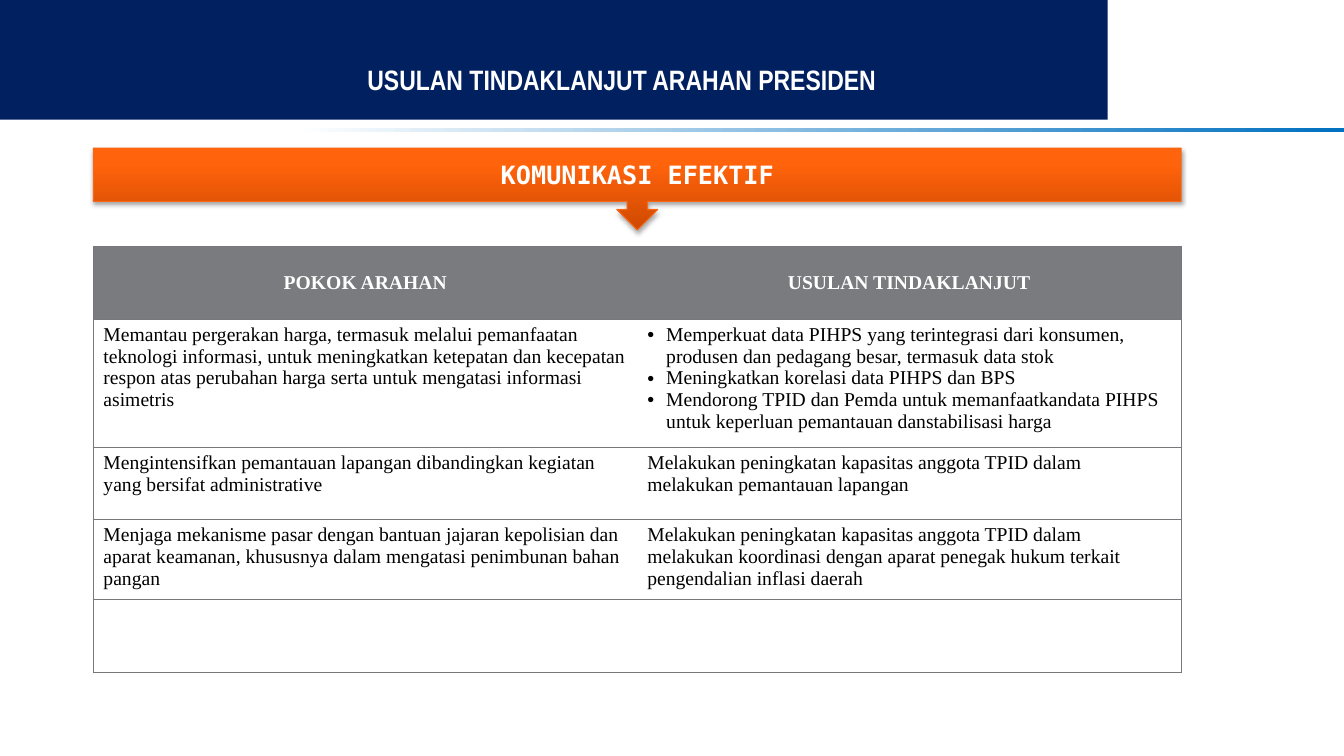
from lxml import etree
from pptx import Presentation
from pptx import util as u
from pptx.dml import color
from pptx.enum import shapes, text
from pptx.oxml import ns

Pt = u.Pt
COLORS = {
    "navy": "002060", "blue": "0070C0", "white": "FFFFFF", "black": "000000",
    "gray": "797B7E", "border": "76787B",
    "orange_dark": "CE4900", "orange": "FF630C", "orange_light": "FF640E",
    "orange_line": "F96615",
}


def add_run(paragraph, words, font, size, color_name, bold=False):
    run = paragraph.add_run()
    run.text = words
    run.font.name = font
    run.font.size = Pt(size)
    run.font.bold = bold
    run.font.color.rgb = color.RGBColor.from_string(COLORS[color_name])


def set_gradient(shape, angle, stops):
    shape.fill.gradient()
    shape.fill.gradient_angle = angle
    stop_list = shape.element.spPr.find(".//" + ns.qn("a:gsLst"))
    for stop in list(stop_list):
        stop_list.remove(stop)
    for position, color_name in stops:
        stop = etree.SubElement(stop_list, ns.qn("a:gs"), pos=str(position * 1000))
        etree.SubElement(stop, ns.qn("a:srgbClr"), val=COLORS[color_name])


presentation = Presentation()
presentation.slide_width, presentation.slide_height = Pt(960), Pt(540)
slide = presentation.slides.add_slide(presentation.slide_layouts[5])

# Header rule and band
rule = slide.shapes.add_shape(
    shapes.MSO_SHAPE.FLOWCHART_PROCESS, Pt(0), Pt(91.5), Pt(960), Pt(2.9))
rule.shadow.inherit = False
rule.line.fill.background()
set_gradient(rule, 180, [(0, "blue"), (78, "white"), (100, "white")])

band = slide.shapes.add_shape(
    shapes.MSO_SHAPE.RECTANGLE, Pt(-1.5), Pt(0), Pt(792.8), Pt(85.4))
band.shadow.inherit = False
band.fill.solid()
band.fill.fore_color.rgb = color.RGBColor.from_string(COLORS["navy"])
band.line.fill.background()

# Title, brought in front of the band
title = slide.shapes.title
title.left, title.top, title.width, title.height = Pt(173.5), Pt(40.3), Pt(541.4), Pt(32.4)
band.element.addnext(title.element)
title.text_frame.auto_size = text.MSO_AUTO_SIZE.NONE
title.text_frame.vertical_anchor = text.MSO_ANCHOR.MIDDLE
paragraph = title.text_frame.paragraphs[0]
paragraph.alignment = text.PP_ALIGN.CENTER
add_run(paragraph, "USULAN TINDAKLANJUT ARAHAN PRESIDEN", "Arial Narrow", 20, "white", True)

# Callout with soft shadow
callout = slide.shapes.add_shape(
    shapes.MSO_SHAPE.DOWN_ARROW_CALLOUT, Pt(66.7), Pt(105.8), Pt(777), Pt(58.5))
set_gradient(callout, 90, [(0, "orange_dark"), (80, "orange"), (100, "orange_light")])
callout.line.color.rgb = color.RGBColor.from_string(COLORS["orange_line"])
callout.line.width = Pt(0.75)
callout.shadow.inherit = False
effects = callout.element.spPr.find(ns.qn("a:effectLst"))
shadow = etree.SubElement(
    effects, ns.qn("a:outerShdw"), blurRad=str(Pt(3.1)), dist=str(Pt(1.8)),
    dir="5400000", rotWithShape="0")
shadow_color = etree.SubElement(shadow, ns.qn("a:srgbClr"), val=COLORS["black"])
etree.SubElement(shadow_color, ns.qn("a:alpha"), val="35000")
callout.text_frame.vertical_anchor = text.MSO_ANCHOR.MIDDLE
paragraph = callout.text_frame.paragraphs[0]
paragraph.alignment = text.PP_ALIGN.CENTER
add_run(paragraph, "KOMUNIKASI EFEKTIF", "DejaVu Sans Mono", 18, "white", True)

# Table content: each cell is a list of paragraphs
rows = [
    (["POKOK ARAHAN"], ["USULAN TINDAKLANJUT"]),
    (["Memantau pergerakan harga, termasuk melalui pemanfaatan teknologi informasi, "
      "untuk meningkatkan ketepatan dan kecepatan respon atas perubahan harga serta "
      "untuk mengatasi informasi asimetris"],
     ["Memperkuat data PIHPS yang terintegrasi dari konsumen, produsen dan pedagang "
      "besar, termasuk data stok",
      "Meningkatkan korelasi data PIHPS dan BPS",
      "Mendorong TPID dan Pemda untuk memanfaatkandata PIHPS untuk keperluan "
      "pemantauan danstabilisasi harga"]),
    (["Mengintensifkan pemantauan lapangan dibandingkan kegiatan yang bersifat "
      "administrative"],
     ["Melakukan peningkatan kapasitas anggota TPID dalam melakukan pemantauan lapangan"]),
    (["Menjaga mekanisme pasar dengan bantuan jajaran kepolisian dan aparat keamanan, "
      "khususnya dalam mengatasi penimbunan bahan pangan"],
     ["Melakukan peningkatan kapasitas anggota TPID dalam melakukan koordinasi dengan "
      "aparat penegak hukum terkait pengendalian inflasi daerah"]),
    ([], []),
]
row_heights = [51.8, 91.4, 51.8, 57.4, 51.8]

# Table frame without a banded style
frame = slide.shapes.add_table(
    len(rows), 2, Pt(66.7), Pt(176.1), Pt(777), Pt(sum(row_heights)))
table = frame.table
table.first_row = table.horz_banding = False
style = frame.element.find(".//" + ns.qn("a:tableStyleId"))
style.text = "{2D5ABB26-0587-4C30-8999-92F81FD0307C}"
for column in table.columns:
    column.width = Pt(388.5)

# Cells: outer and horizontal borders, fills and text
for row_index, row in enumerate(rows):
    table.rows[row_index].height = Pt(row_heights[row_index])
    is_header = row_index == 0
    for column_index, items in enumerate(row):
        cell = table.cell(row_index, column_index)
        properties = cell._tc.get_or_add_tcPr()
        for side in ("lnL" if column_index == 0 else "lnR", "lnT", "lnB"):
            border = etree.SubElement(properties, ns.qn("a:" + side), w=str(Pt(0.75)))
            border_fill = etree.SubElement(border, ns.qn("a:solidFill"))
            etree.SubElement(border_fill, ns.qn("a:srgbClr"), val=COLORS["border"])
        cell.fill.solid()
        cell.fill.fore_color.rgb = color.RGBColor.from_string(
            COLORS["gray" if is_header else "white"])
        if is_header:
            cell.vertical_anchor = text.MSO_ANCHOR.MIDDLE
        for item_index, item in enumerate(items):
            paragraphs = cell.text_frame.paragraphs
            paragraph = paragraphs[0] if item_index == 0 else cell.text_frame.add_paragraph()
            if is_header:
                paragraph.alignment = text.PP_ALIGN.CENTER
            if len(items) > 1:
                bullet = paragraph._p.get_or_add_pPr()
                bullet.set("marL", str(Pt(13.5)))
                bullet.set("indent", str(-Pt(13.5)))
                etree.SubElement(bullet, ns.qn("a:buFont"), typeface="Arial")
                etree.SubElement(bullet, ns.qn("a:buChar"), char="•")
            add_run(paragraph, item, "Times New Roman", 14,
                    "white" if is_header else "black", is_header)

# Last row spans both columns
table.cell(4, 0).merge(table.cell(4, 1))
last_properties = table.cell(4, 0)._tc.tcPr
right_border = etree.fromstring(etree.tostring(table.cell(4, 1)._tc.tcPr.find(ns.qn("a:lnR"))))
last_properties.insert(1, right_border)

presentation.save("out.pptx")
